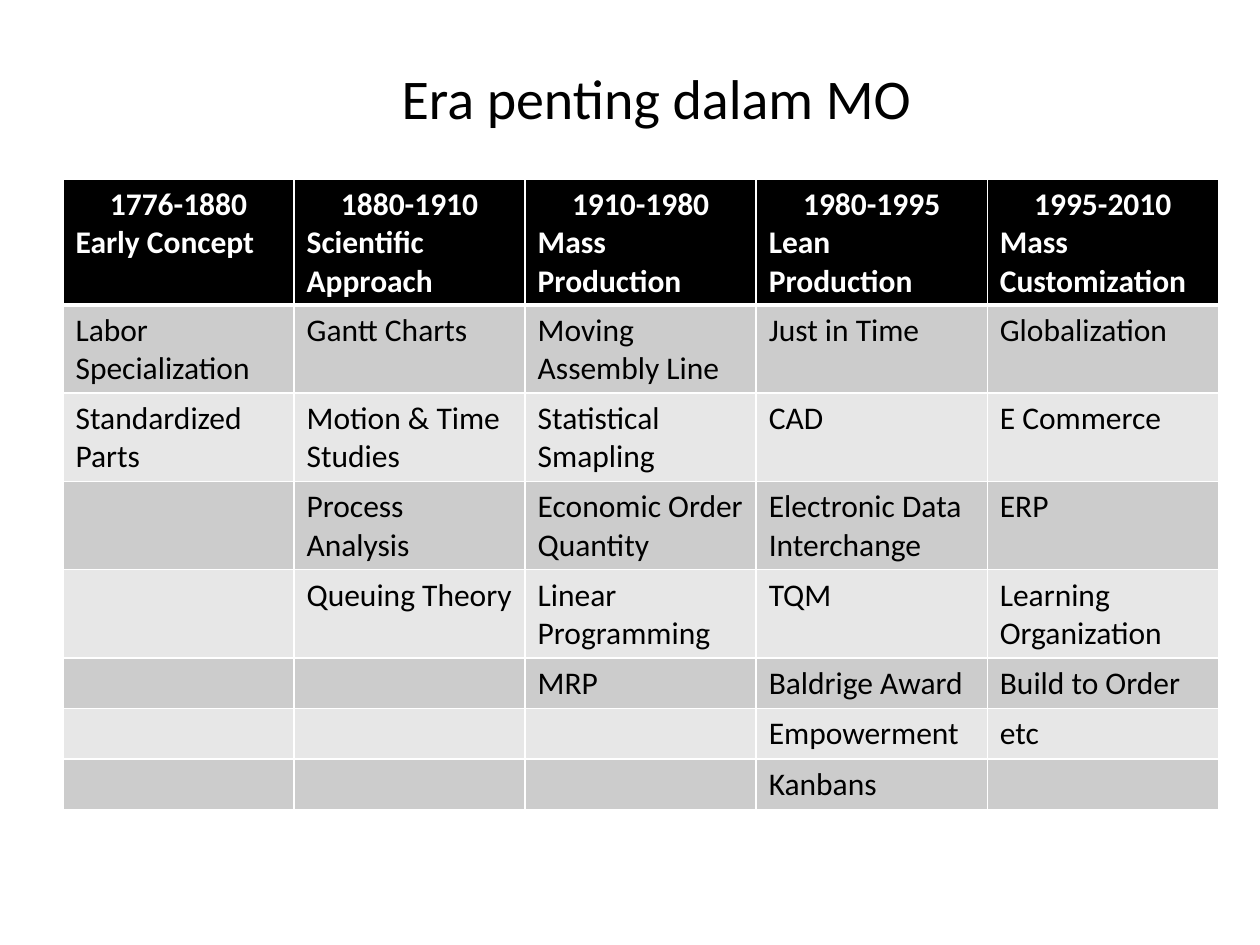
from lxml import etree
from pptx import Presentation
from pptx.dml.color import RGBColor as RGB
from pptx.enum.text import MSO_ANCHOR as ANCHOR, PP_ALIGN as ALIGN
from pptx.oxml.ns import qn
from pptx.util import Inches, Pt

COLORS = {"ink": "000000", "paper": "FFFFFF", "dark": "CCCCCC", "light": "E7E7E7"}
FONT = "Calibri"
LINE_H, CELL_PAD = 0.3, 0.1

# Each era: years, name, then its milestones from top to bottom
ERAS = [
    ("1776-1880", "Early Concept",
     ["Labor Specialization", "Standardized Parts"]),
    ("1880-1910", "Scientific Approach",
     ["Gantt Charts", "Motion & Time Studies", "Process Analysis", "Queuing Theory"]),
    ("1910-1980", "Mass Production",
     ["Moving Assembly Line", "Statistical Smapling", "Economic Order Quantity",
      "Linear Programming", "MRP"]),
    ("1980-1995", "Lean Production",
     ["Just in Time", "CAD", "Electronic Data Interchange", "TQM",
      "Baldrige Award", "Empowerment", "Kanbans"]),
    ("1995-2010", "Mass Customization",
     ["Globalization", "E Commerce", "ERP", "Learning Organization",
      "Build to Order", "etc"]),
]
ROW_LINES = [3, 2, 2, 2, 2, 1, 1, 1]


def style(p, size, color, bold=False, align=ALIGN.LEFT):
    p.alignment = align
    for r in p.runs:
        r.font.name, r.font.size, r.font.bold = FONT, Pt(size), bold
        r.font.color.rgb = RGB.from_string(COLORS[color])


def set_borders(cell, bottom):
    tcPr = cell._tc.get_or_add_tcPr()
    widths = {"a:lnL": 1, "a:lnR": 1, "a:lnT": 1, "a:lnB": bottom}
    for i, (tag, width) in enumerate(widths.items()):
        ln = etree.Element(qn(tag), w=str(Pt(width)))
        fill = etree.SubElement(ln, qn("a:solidFill"))
        etree.SubElement(fill, qn("a:srgbClr"), val=COLORS["paper"])
        tcPr.insert(i, ln)


def fill_cell(cell, text, fill, bottom=1):
    cell.text_frame.text = text
    cell.fill.solid()
    cell.fill.fore_color.rgb = RGB.from_string(COLORS[fill])
    set_borders(cell, bottom)


def add_title(s, box, text):
    tf = s.shapes.add_textbox(*box).text_frame
    tf.word_wrap = True
    tf.vertical_anchor = ANCHOR.MIDDLE
    tf.text = text
    style(tf.paragraphs[0], 32, "ink", align=ALIGN.CENTER)


def add_era_table(s, box):
    table = s.shapes.add_table(len(ROW_LINES), len(ERAS), *box).table
    for row, lines in zip(table.rows, ROW_LINES):
        row.height = Inches(CELL_PAD + LINE_H * lines)
    for c, (years, name, milestones) in enumerate(ERAS):
        # Header: centred years above the era's name
        head = table.cell(0, c)
        fill_cell(head, f"{years}\n{name}", "ink", bottom=3)
        for p, align in zip(head.text_frame.paragraphs, (ALIGN.CENTER, ALIGN.LEFT)):
            style(p, 18, "paper", True, align)
        # Banded body
        for r in range(1, len(ROW_LINES)):
            cell = table.cell(r, c)
            text = milestones[r - 1] if r <= len(milestones) else ""
            fill_cell(cell, text, "dark" if r % 2 else "light",)
            if r == 1:
                cell._tc.tcPr.find(qn("a:lnT")).set("w", str(Pt(3)))
            style(cell.text_frame.paragraphs[0], 18, "ink")


def main():
    prs = Presentation()
    prs.slide_width, prs.slide_height = Inches(10), Inches(7.5)
    s = prs.slides.add_slide(prs.slide_layouts[6])
    add_title(s, (Inches(2.42), Inches(0.33), Inches(5.58), Inches(0.88)),
              "Era penting dalam MO")
    table_h = sum(CELL_PAD + LINE_H * n for n in ROW_LINES)
    add_era_table(s, (Inches(0.5), Inches(1.42), Inches(9.17), Inches(table_h)))
    prs.save("out.pptx")


if __name__ == "__main__":
    main()
